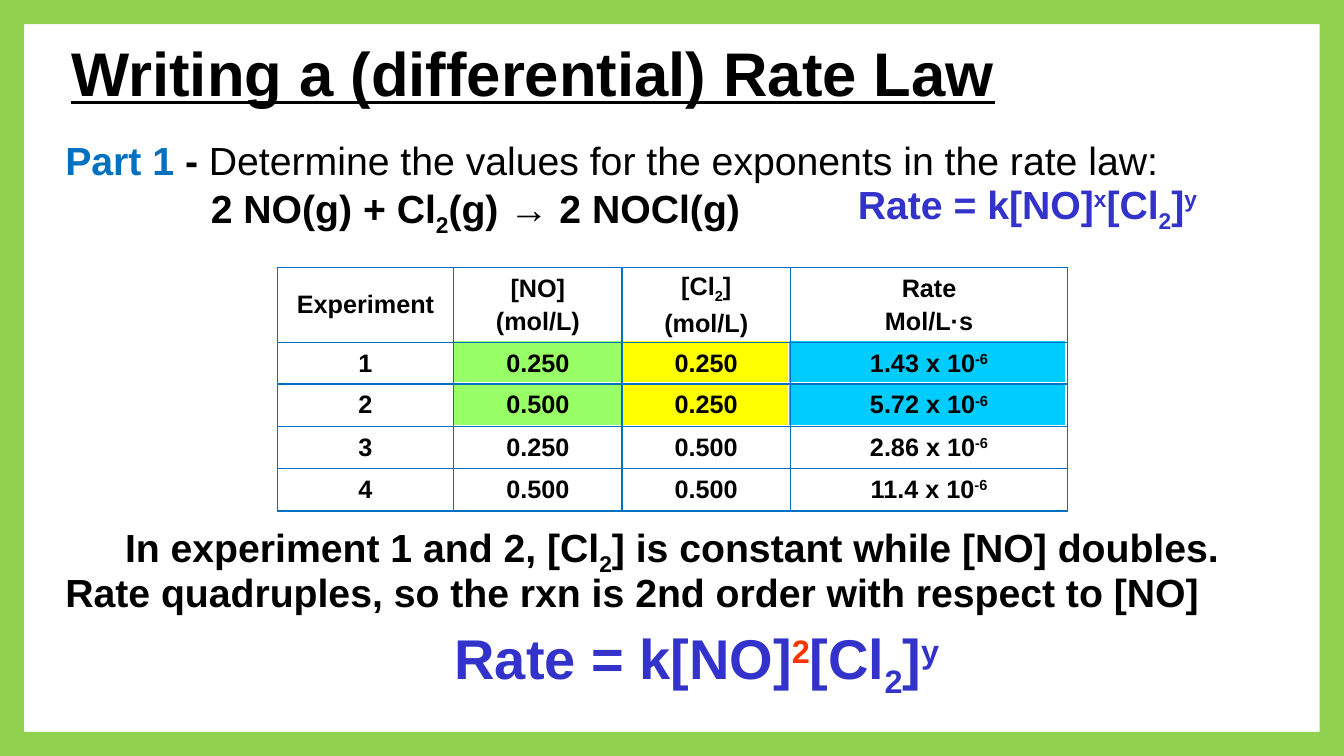
from lxml import etree
from pptx import Presentation
from pptx.dml.color import RGBColor
from pptx.enum.shapes import MSO_SHAPE
from pptx.enum.text import MSO_ANCHOR, MSO_AUTO_SIZE, PP_ALIGN
from pptx.oxml.ns import qn
from pptx.util import Inches, Pt

BLACK = RGBColor(0x00, 0x00, 0x00)
WHITE = RGBColor(0xFF, 0xFF, 0xFF)
BLUE = RGBColor(0x00, 0x70, 0xC0)
INDIGO = RGBColor(0x33, 0x33, 0xCC)
RED = RGBColor(0xFF, 0x33, 0x00)
CYAN = RGBColor(0x00, 0xCC, 0xFF)
YELLOW = RGBColor(0xFF, 0xFF, 0x00)
LIME = RGBColor(0x99, 0xFF, 0x66)
FRAME_GREEN = RGBColor(0x92, 0xD0, 0x50)

LEFT, CENTER = PP_ALIGN.LEFT, PP_ALIGN.CENTER
TOP, MIDDLE = MSO_ANCHOR.TOP, MSO_ANCHOR.MIDDLE
NO_AUTOFIT, GROW = MSO_AUTO_SIZE.NONE, MSO_AUTO_SIZE.SHAPE_TO_FIT_TEXT
SUB, SUPER = {"baseline": -25}, {"baseline": 30}


def add_spans(para, spans, size, color=BLACK):
    """Add bold Arial spans; each is text or (text, format values)."""
    for span in spans:
        text, changes = (span, {}) if isinstance(span, str) else span
        values = {"name": "Arial", "size": Pt(size), "bold": True, **changes}
        baseline = values.pop("baseline", 0)
        span_color = values.pop("color", color)
        run = para.add_run()
        run.text = text
        for name, value in values.items():
            setattr(run.font, name, value)
        run.font.color.rgb = span_color
        if baseline:
            run._r.get_or_add_rPr().set("baseline", str(baseline * 1000))


def add_plain_shape(kind, place, fill):
    shape = page.shapes.add_shape(kind, *map(Inches, place))
    shape.shadow.inherit = False
    shape.fill.solid()
    shape.fill.fore_color.rgb = fill
    return shape


deck = Presentation()
deck.slide_width, deck.slide_height = Inches(13.33), Inches(7.5)
page = deck.slides.add_slide(deck.slide_layouts[6])

# Highlights behind the table rows of experiments 1 and 2
for left, width, fill in [(7.82, 2.75, CYAN), (6.15, 1.67, YELLOW), (4.49, 1.67, LIME)]:
    for top in (3.8, 3.38):
        highlight = add_plain_shape(MSO_SHAPE.RECTANGLE, (left, top, width, 0.42), fill)
        highlight.line.color.rgb = WHITE
        highlight.line.width = Pt(0.75)

# Table of experiments
column_widths = [1.75, 1.67, 1.67, 2.75]
row_heights = [0.75, 0.41, 0.42, 0.42, 0.42]
rows = [[[["Experiment"]], [["[NO]"], ["(mol/L)"]],
         [["[Cl", ("2", SUB), "]"], ["(mol/L)"]], [["Rate"], ["Mol/L·s"]]]]
results = [("0.250", "0.250", "1.43"), ("0.500", "0.250", "5.72"),
           ("0.250", "0.500", "2.86"), ("0.500", "0.500", "11.4")]
for number, (no, chlorine, rate) in enumerate(results, 1):
    rows.append([[[str(number)]], [[no]], [[chlorine]],
                 [[f"{rate} x 10", ("-6", SUPER)]]])

table = page.shapes.add_table(len(rows), len(column_widths), Inches(2.75), Inches(2.65),
                              Inches(7.83), Inches(2.42)).table
table.first_row = table.horz_banding = False
for column, width in zip(table.columns, column_widths):
    column.width = Inches(width)
for row, height, cells in zip(table.rows, row_heights, rows):
    row.height = Inches(height)
    for cell, lines in zip(row.cells, cells):
        cell.vertical_anchor = MIDDLE
        properties = cell._tc.get_or_add_tcPr()
        for side in ("a:lnL", "a:lnR", "a:lnT", "a:lnB"):
            border = etree.SubElement(properties, qn(side), w=str(Pt(1)))
            solid = etree.SubElement(border, qn("a:solidFill"))
            etree.SubElement(solid, qn("a:srgbClr"), val=str(BLUE))
        cell.fill.background()
        for index, spans in enumerate(lines):
            para = cell.text_frame.add_paragraph() if index else cell.text_frame.paragraphs[0]
            para.alignment = CENTER
            para.space_before = Pt(3.6)
            add_spans(para, spans, 18)

# Green frame around the page
frame = add_plain_shape(MSO_SHAPE.FRAME, (0, 0, 13.33, 7.5), FRAME_GREEN)
frame.adjustments[0] = 0.032
frame.line.fill.background()

# Text: place, size, colour, alignment, anchor, wrap, autofit, spans
text_boxes = [
    ((0.55, 1.3, 12.23, 0.57), 28, BLACK, LEFT, TOP, True, GROW,
     [("Part 1 ", {"color": BLUE}), "- ",
      ("Determine the values for the exponents in the rate law:", {"bold": False})]),
    ((1.59, 1.78, 6.25, 0.57), 28, BLACK, CENTER, TOP, True, GROW,
     ["2 NO(g) + Cl", ("2", SUB), "(g) → 2 NOCl(g)"]),
    ((8.41, 1.74, 3.67, 0.57), 28, INDIGO, LEFT, TOP, False, GROW,
     ["Rate = k[NO]", ("x", SUPER), "[Cl", ("2", SUB), "]", ("y", SUPER)]),
    ((0.55, 5.14, 12.23, 0.57), 28, BLACK, CENTER, TOP, True, GROW,
     ["In experiment 1 and 2, [Cl", ("2", SUB), "] is constant while [NO] doubles."]),
    ((0.55, 5.59, 12.23, 0.57), 28, BLACK, LEFT, TOP, True, GROW,
     ["Rate quadruples, so the rxn is 2nd order with respect to [NO]"]),
    ((4.41, 6.14, 5.15, 0.77), 40, INDIGO, LEFT, TOP, False, GROW,
     ["Rate = k[NO]", ("2", {**SUPER, "color": RED}), "[Cl", ("2", SUB), "]", ("y", SUPER)]),
    ((0.61, 0.23, 10.56, 0.96), 44, BLACK, LEFT, MIDDLE, True, NO_AUTOFIT,
     [("Writing a (differential) Rate Law", {"underline": True})]),
]
for place, size, color, alignment, anchor, wrap, autofit, spans in text_boxes:
    box = page.shapes.add_textbox(*map(Inches, place))
    text_frame = box.text_frame
    text_frame.word_wrap = wrap
    text_frame.auto_size = autofit
    text_frame.vertical_anchor = anchor
    para = text_frame.paragraphs[0]
    para.alignment = alignment
    add_spans(para, spans, size, color)

deck.save("out.pptx")
